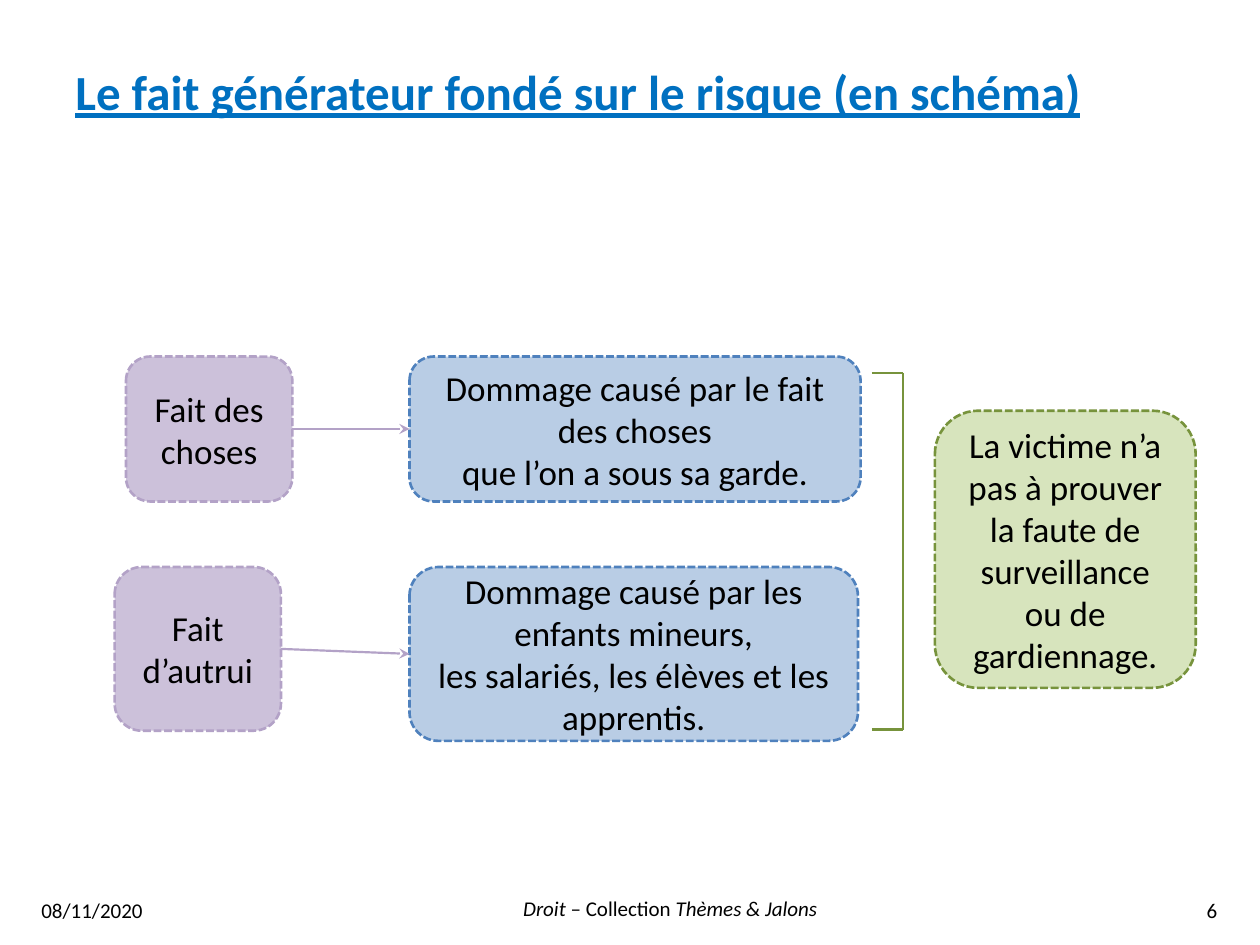
from dataclasses import dataclass

from lxml import etree
from pptx import Presentation
from pptx.dml.color import RGBColor
from pptx.enum import dml, shapes, text
from pptx.oxml import ns
from pptx.util import Inches, Pt


@dataclass(frozen=True)
class Theme:
    font: str = "Calibri"
    title: str = "0070C0"
    ink: str = "000000"
    purple: tuple = ("CCC1DA", "B3A2C7")  # fill, line
    blue: tuple = ("B9CDE5", "4F81BD")
    green: tuple = ("D7E4BD", "77933C")
    title_size: int = 28
    body_size: int = 20
    footer_size: int = 12


T = Theme()
LEFT, CENTER, RIGHT = text.PP_ALIGN.LEFT, text.PP_ALIGN.CENTER, text.PP_ALIGN.RIGHT
MIDDLE = text.MSO_ANCHOR.MIDDLE

prs = Presentation()
prs.slide_width, prs.slide_height = Inches(10), Inches(7.5)
s = prs.slides.add_slide(prs.slide_layouts[6])


def write(sp, paragraphs, size, align, color=T.ink, anchor=MIDDLE):
    """Fill a shape with paragraphs, each a list of (text, italic) runs."""
    tf = sp.text_frame
    tf.word_wrap = True
    tf.vertical_anchor = anchor
    for i, runs in enumerate(paragraphs):
        p = tf.add_paragraph() if i else tf.paragraphs[0]
        p.alignment = align
        for content, italic in runs:
            r = p.add_run()
            r.text = content
            r.font.name, r.font.size = T.font, Pt(size)
            r.font.italic = italic
            r.font.color.rgb = RGBColor.from_string(color)
    return tf


def draw_line(start, end, color, arrow=False):
    line = s.shapes.add_connector(
        shapes.MSO_CONNECTOR.STRAIGHT, *(Inches(v) for v in start + end))
    line.line.color.rgb = RGBColor.from_string(color)
    line.line.width = Pt(1.25)
    etree.SubElement(line._element.spPr, ns.qn("a:effectLst"))
    if arrow:
        etree.SubElement(line.line._get_or_add_ln(), ns.qn("a:tailEnd"), type="stealth")
    return line


# Title
title = s.shapes.add_textbox(Inches(0.5), Inches(0.44), Inches(9), Inches(0.6))
tf = write(title, [[("Le fait générateur fondé sur le risque (en schéma)", False)]],
           T.title_size, LEFT, T.title, text.MSO_ANCHOR.TOP)
font = tf.paragraphs[0].runs[0].font
font.bold = font.underline = True

# Footer
footers = [
    (0.23, 7.02, 2.33, LEFT, [("08/11/2020", False)]),
    (3.92, 7.01, 2.8, CENTER,
     [("Droit", True), (" – Collection ", False), ("Thèmes & Jalons", True)]),
    (7.43, 7.02, 2.33, RIGHT, [("6", False)]),
]
for x, y, w, align, runs in footers:
    sp = s.shapes.add_textbox(Inches(x), Inches(y), Inches(w), Inches(0.4))
    write(sp, [runs], T.footer_size, align)

# Boxes: name, position and size, colours, paragraphs
boxes = [
    ("choses", (1, 2.83, 1.32, 1.15), T.purple, ["Fait des choses"]),
    ("dommage choses", (3.25, 2.83, 3.58, 1.15), T.blue,
     ["Dommage causé par le fait des choses", "que l’on a sous sa garde."]),
    ("autrui", (0.91, 4.5, 1.32, 1.3), T.purple, ["Fait d’autrui"]),
    ("dommage autrui", (3.25, 4.5, 3.56, 1.38), T.blue,
     ["Dommage causé par les enfants mineurs,",
      "les salariés, les élèves et les apprentis."]),
    ("victime", (7.42, 3.26, 2.07, 2.2), T.green,
     ["La victime n’a", "pas à prouver", "la faute de",
      "surveillance ou de gardiennage."]),
]
box = {}
for name, place, (fill, outline), lines in boxes:
    sp = s.shapes.add_shape(shapes.MSO_SHAPE.ROUNDED_RECTANGLE,
                            *(Inches(v) for v in place))
    sp.shadow.inherit = False
    sp.fill.solid()
    sp.fill.fore_color.rgb = RGBColor.from_string(fill)
    sp.line.color.rgb = RGBColor.from_string(outline)
    sp.line.width = Pt(1.5)
    sp.line.dash_style = dml.MSO_LINE.SQUARE_DOT
    write(sp, [[(line, False)] for line in lines], T.body_size, CENTER)
    box[name] = sp

# Arrows from each cause to its damage
for cause, x, y1, y2 in [("choses", 2.32, 3.41, 3.41), ("autrui", 2.23, 5.15, 5.19)]:
    arrow = draw_line((x, y1), (3.25, y2), T.purple[1], arrow=True)
    arrow.begin_connect(box[cause], 3)
    arrow.end_connect(box["dommage " + cause], 1)

# Bracket gathering both damages
left, right, top, bottom = 6.92, 7.17, 2.96, 5.79
for start, end in [((left, top), (right, top)),
                   ((left, bottom), (right, bottom)),
                   ((right, top), (right, bottom))]:
    draw_line(start, end, T.green[1])

prs.save("out.pptx")
